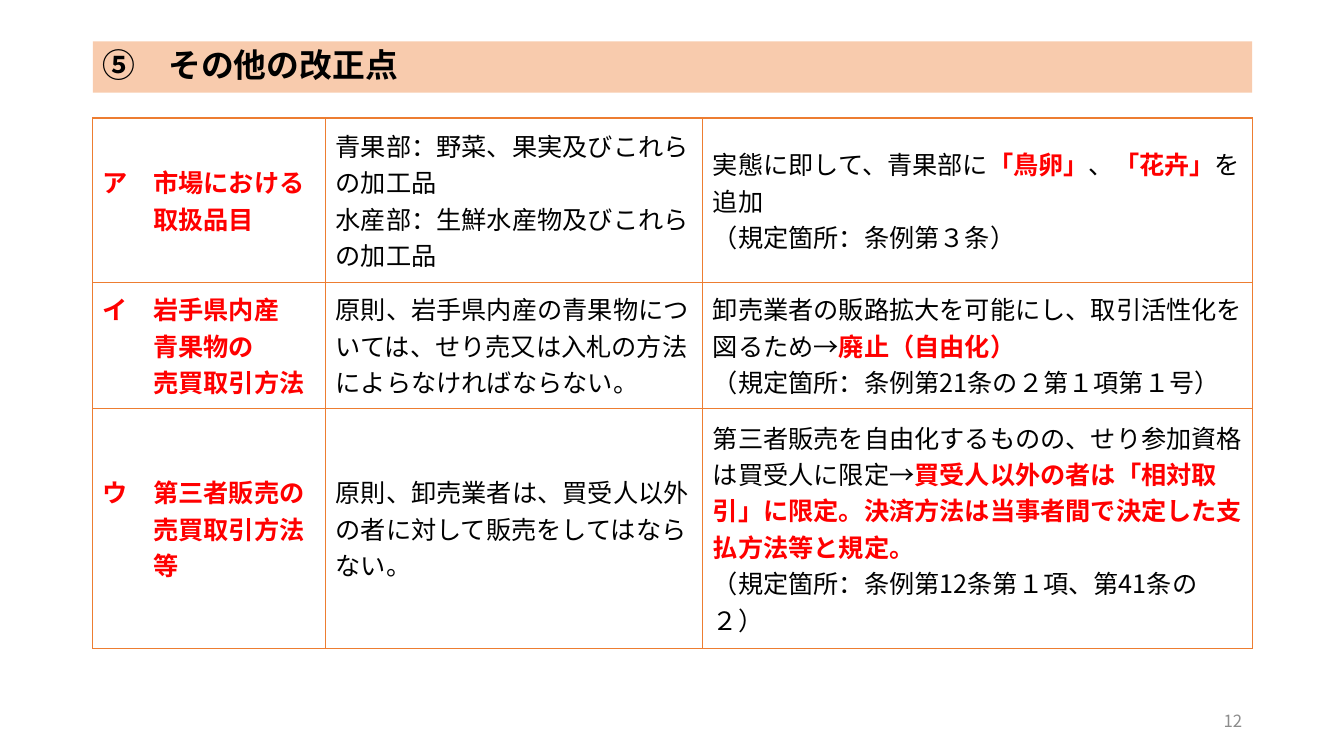
from lxml import etree
from pptx import Presentation
from pptx.dml.color import RGBColor
from pptx.enum.text import MSO_ANCHOR, MSO_AUTO_SIZE, PP_ALIGN
from pptx.oxml.ns import qn
from pptx.util import Emu, Pt

MIDDLE = MSO_ANCHOR.MIDDLE
NO_FIT = MSO_AUTO_SIZE.NONE
LEFT, RIGHT = PP_ALIGN.LEFT, PP_ALIGN.RIGHT

BLACK = RGBColor(0x00, 0x00, 0x00)
RED = RGBColor(0xFF, 0x00, 0x00)
GRAY = RGBColor(0x8C, 0x8C, 0x8C)
PEACH = RGBColor(0xF8, 0xCB, 0xAD)
ORANGE = RGBColor(0xED, 0x7D, 0x31)

FONT = "Noto Sans CJK JP"
SCALE = 9144  # EMU in one px, 100 px to the inch
TITLE_ONLY = 5

COLS = [231, 374, 545]
HEIGHTS = [163, 125, 238]
HANG = 50  # two full-width characters at 18 pt

# Text between bars is red and bold; each cell is a list of paragraphs
ROWS = [
    [
        ["|ア　市場における|", "|取扱品目|"],
        ["青果部：野菜、果実及びこれらの加工品",
         "水産部：生鮮水産物及びこれらの加工品"],
        ["実態に即して、青果部に|「鳥卵」|、|「花卉」|を追加",
         "（規定箇所：条例第３条）"],
    ],
    [
        ["|イ　岩手県内産|", "|青果物の|", "|売買取引方法|"],
        ["原則、岩手県内産の青果物については、せり売又は入札の方法によらなければならない。"],
        ["卸売業者の販路拡大を可能にし、取引活性化を図るため→|廃止（自由化）|",
         "（規定箇所：条例第21条の２第１項第１号）"],
    ],
    [
        ["|ウ　第三者販売の|", "|売買取引方法|", "|等|"],
        ["原則、卸売業者は、買受人以外の者に対して販売をしてはならない。"],
        ["第三者販売を自由化するものの、せり参加資格は買受人に限定→"
         "|買受人以外の者は「相対取引」に限定。決済方法は当事者間で決定した支払方法等と規定。|",
         "（規定箇所：条例第12条第１項、第41条の２）"],
    ],
]


def px(num):
    return Emu(num * SCALE)


def write(frame, lines, size=18, color=BLACK, bold=False, align=LEFT,
          space=None, hang=0):
    """Fill a text frame; paragraphs after the first are indented by hang."""
    frame.word_wrap = True
    frame.vertical_anchor = MIDDLE
    for row, line in enumerate(lines):
        para = frame.add_paragraph() if row else frame.paragraphs[0]
        para.alignment = align
        if space:
            para.line_spacing = space
        if row and hang:
            para._p.get_or_add_pPr().set("marL", str(px(hang)))
        for part, text in enumerate(line.split("|")):
            if not text:
                continue
            marked = part % 2 == 1
            run = para.add_run()
            run.text = text
            font = run.font
            font.name = FONT
            font.size = Pt(size)
            font.bold = bold or marked
            font.color.rgb = RED if marked else color
            face = etree.SubElement(run._r.get_or_add_rPr(), qn("a:ea"))
            face.set("typeface", FONT)


def frame_cell(cell):
    """Give a cell thin borders and no fill."""
    props = cell._tc.get_or_add_tcPr()
    for side in ("lnL", "lnR", "lnT", "lnB"):
        line = etree.SubElement(props, qn("a:" + side), w=str(Pt(1)))
        fill = etree.SubElement(line, qn("a:solidFill"))
        etree.SubElement(fill, qn("a:srgbClr"), val=str(ORANGE))
    cell.fill.background()


def add_title(slide, text, left, top, width, height):
    title = slide.shapes.title
    title.left, title.top = px(left), px(top)
    title.width, title.height = px(width), px(height)
    title.fill.solid()
    title.fill.fore_color.rgb = PEACH
    title.text_frame.auto_size = NO_FIT
    write(title.text_frame, [text], size=23.4, bold=True, space=0.9)


def add_grid(slide, left, top):
    shape = slide.shapes.add_table(
        len(ROWS), len(COLS), px(left), px(top), px(sum(COLS)), px(sum(HEIGHTS)))
    table = shape.table
    table.first_row = table.horz_banding = False
    for col, width in zip(table.columns, COLS):
        col.width = px(width)
    for y, (height, cells) in enumerate(zip(HEIGHTS, ROWS)):
        table.rows[y].height = px(height)
        for x, lines in enumerate(cells):
            cell = table.cell(y, x)
            frame_cell(cell)
            write(cell.text_frame, lines, hang=0 if x else HANG)
            cell.vertical_anchor = MIDDLE


def add_number(slide, text, left, top, width, height):
    box = slide.shapes.add_textbox(px(left), px(top), px(width), px(height))
    write(box.text_frame, [text], size=12, color=GRAY, align=RIGHT)


def main():
    deck = Presentation()
    deck.slide_width, deck.slide_height = px(1333), px(750)
    slide = deck.slides.add_slide(deck.slide_layouts[TITLE_ONLY])

    # Heading bar, table of changes, page number
    add_title(slide, "⑤　その他の改正点", 92, 41, 1150, 51)
    add_grid(slide, 92, 117)
    add_number(slide, "12", 942, 695, 300, 40)

    deck.save("out.pptx")


if __name__ == "__main__":
    main()
